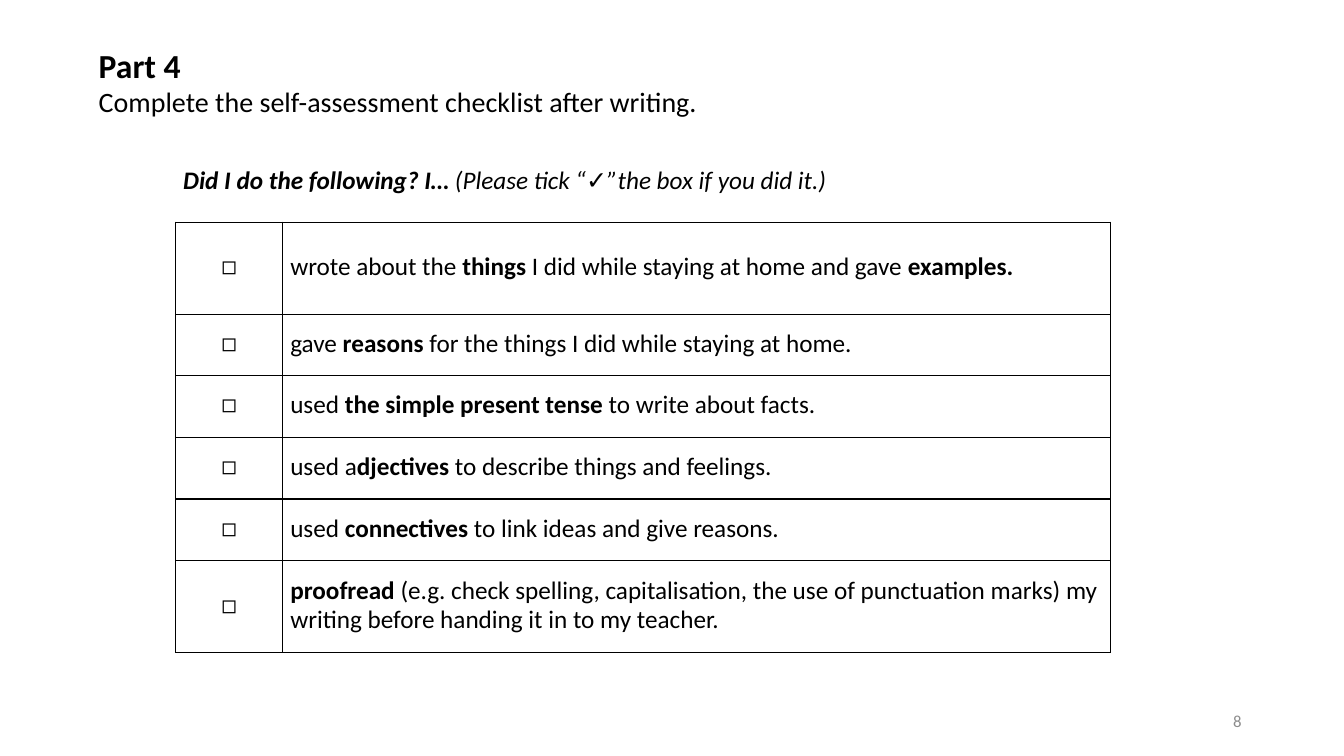
from lxml.etree import SubElement
from pptx import Presentation
from pptx.dml.color import RGBColor
from pptx.enum.text import MSO_ANCHOR, PP_ALIGN
from pptx.oxml.ns import qn
from pptx.util import Pt

COLORS = {"text": "000000", "border": "000000", "number": "8C8C8C"}
FONT = "Calibri"

# Each item is a list of (text, is bold) runs
CHECKLIST = [
    [("wrote about the ", False), ("things", True),
     (" I did while staying at home and gave ", False), ("examples.", True)],
    [("gave ", False), ("reasons", True),
     (" for the things I did while staying at home.", False)],
    [("used ", False), ("the simple present tense", True),
     (" to write about facts.", False)],
    [("used a", False), ("djectives", True),
     (" to describe things and feelings.", False)],
    [("used ", False), ("connectives", True),
     (" to link ideas and give reasons.", False)],
    [("proofread", True),
     (" (e.g. check spelling, capitalisation, the use of punctuation marks) "
      "my writing before handing it in to my teacher.", False)],
]
JUSTIFIED_ROWS = 2
COL_WIDTHS = [76.5, 591]
ROW_HEIGHTS = [65.8, 44, 44, 44, 44, 65.8]


def add_runs(p, runs, size, color="text", italic=False):
    for text, bold in runs:
        r = p.add_run()
        r.text = text
        r.font.color.rgb = RGBColor.from_string(COLORS[color])
        formats = {"name": FONT, "size": Pt(size), "bold": bold, "italic": italic}
        for name, value in formats.items():
            setattr(r.font, name, value)


def add_text(s, box, paragraphs, anchor=MSO_ANCHOR.TOP, align=PP_ALIGN.LEFT, **style):
    """Add a text box; paragraphs is a list of (runs, size)."""
    tf = s.shapes.add_textbox(*map(Pt, box)).text_frame
    tf.word_wrap = True
    tf.vertical_anchor = anchor
    for i, (runs, size) in enumerate(paragraphs):
        p = tf.add_paragraph() if i else tf.paragraphs[0]
        p.alignment = align
        add_runs(p, runs, size, **style)


def set_borders(cell):
    tc_pr = cell._tc.get_or_add_tcPr()
    for i, side in enumerate(("a:lnL", "a:lnR", "a:lnT", "a:lnB")):
        ln = SubElement(tc_pr, qn(side), w=str(Pt(1)))
        fill = SubElement(ln, qn("a:solidFill"))
        SubElement(fill, qn("a:srgbClr"), val=COLORS["border"])
        tc_pr.insert(i, ln)  # borders come before the fill


def fill_cell(cell, runs, align):
    formats = {"margin_left": Pt(5.4), "margin_right": Pt(5.4), "margin_top": 0,
               "margin_bottom": 0, "vertical_anchor": MSO_ANCHOR.MIDDLE}
    for name, value in formats.items():
        setattr(cell, name, value)
    cell.fill.background()
    set_borders(cell)
    p = cell.text_frame.paragraphs[0]
    p.alignment = align
    p.line_spacing = Pt(20)
    add_runs(p, runs, 18)


def add_checklist(s, left, top):
    table = s.shapes.add_table(len(CHECKLIST), len(COL_WIDTHS), Pt(left), Pt(top),
                               Pt(sum(COL_WIDTHS)), Pt(sum(ROW_HEIGHTS))).table
    table.first_row = table.horz_banding = False
    for column, width in zip(table.columns, COL_WIDTHS):
        column.width = Pt(width)
    for i, (runs, height) in enumerate(zip(CHECKLIST, ROW_HEIGHTS)):
        table.rows[i].height = Pt(height)
        fill_cell(table.cell(i, 0), [("◻", False)], PP_ALIGN.CENTER)
        align = PP_ALIGN.JUSTIFY if i < JUSTIFIED_ROWS else PP_ALIGN.LEFT
        fill_cell(table.cell(i, 1), runs, align)


def main():
    prs = Presentation()
    prs.slide_width, prs.slide_height = Pt(960), Pt(540)
    s = prs.slides.add_slide(prs.slide_layouts[6])

    # Slide number
    add_text(s, (678, 500.5, 216, 28.75), [([("8", False)], 12)],
             anchor=MSO_ANCHOR.MIDDLE, align=PP_ALIGN.RIGHT, color="number")

    # Heading and task
    add_text(s, (63.4, 28.2, 480, 60.5), [
        ([("Part 4", True)], 24),
        ([("Complete the self-assessment checklist after writing.", False)], 20),
    ])

    # Checklist and its lead-in
    add_checklist(s, 125.5, 158.7)
    add_text(s, (123.8, 114, 562, 29), [
        ([("Did I do the following? I… ", True),
          ("(Please tick “✓”the box if you did it.)", False)], 18),
    ], italic=True)

    prs.save("out.pptx")


if __name__ == "__main__":
    main()
